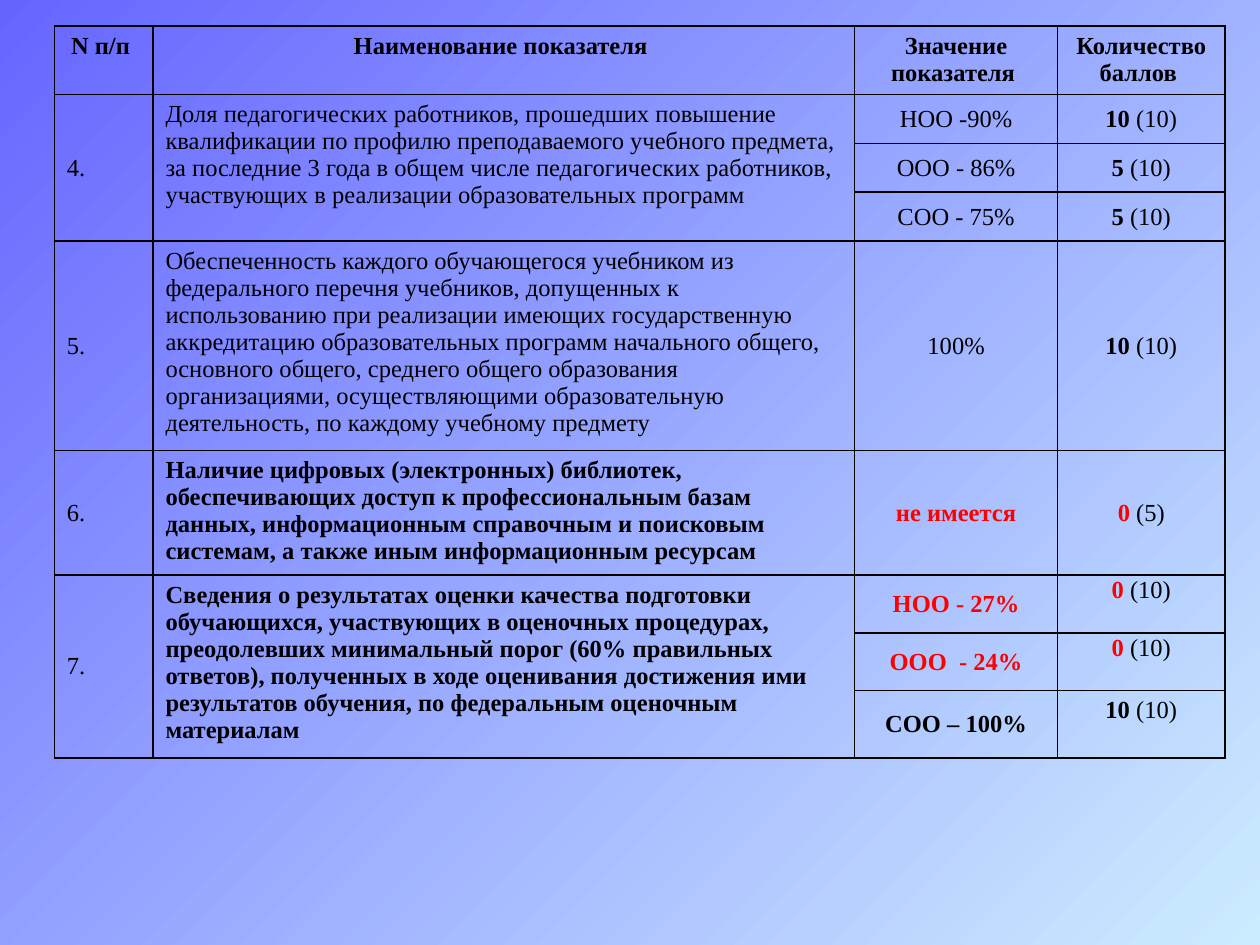
from dataclasses import dataclass

from lxml import etree
from pptx import Presentation
from pptx.dml.color import RGBColor
from pptx.enum.text import MSO_ANCHOR, PP_ALIGN
from pptx.oxml.ns import qn
from pptx.util import Pt

TOP, MIDDLE = MSO_ANCHOR.TOP, MSO_ANCHOR.MIDDLE
LEFT, CENTER = PP_ALIGN.LEFT, PP_ALIGN.CENTER


@dataclass(frozen=True)
class Theme:
    font: str = "Times New Roman"
    size: int = 14
    line: int = 1
    ink: str = "000000"
    alert: str = "FF0000"
    start: str = "6666FF"
    end: str = "CCECFF"


THEME = Theme()
WIDE = (7.2, 3.6)   # side and top insets of headings, numbers and names
TIGHT = (5.0, 0)    # the same for values and scores
LIFT = 15.5         # bottom inset that raises a score by half a line

COLS = (56.4, 401, 116, 95.6)
ROWS = (38.9, 28, 28, 28, 119.5, 71.4, 33, 33, 38.4)
TALL = 431.3

HEADS = ("N п/п ", "Наименование показателя ",
         "Значение показателя ", "Количество баллов ")

# number, name, strong, [(value, score, limit)]
GROUPS = (
    ("4.", "Доля педагогических работников, прошедших повышение квалификации "
     "по профилю преподаваемого учебного предмета, за последние 3 года в общем "
     "числе педагогических работников, участвующих в реализации "
     "образовательных программ", False,
     [("НОО -90%", "10", " (10)"), ("ООО - 86%", "5", " (10)"),
      ("СОО - 75%", "5", " (10)")]),
    ("5.", "Обеспеченность каждого обучающегося учебником из федерального "
     "перечня учебников, допущенных к использованию при реализации имеющих "
     "государственную аккредитацию образовательных программ начального общего, "
     "основного общего, среднего общего образования организациями, "
     "осуществляющими образовательную деятельность, по каждому учебному "
     "предмету", False,
     [("100%", "10", " (10)")]),
    ("6.", "Наличие цифровых (электронных) библиотек, обеспечивающих доступ к "
     "профессиональным базам данных, информационным справочным и поисковым "
     "системам, а также иным информационным ресурсам", True,
     [("не имеется", "0 ", "(5)")]),
    ("7.", "Сведения о результатах оценки качества подготовки обучающихся, "
     "участвующих в оценочных процедурах, преодолевших минимальный порог (60% "
     "правильных ответов), полученных в ходе оценивания достижения ими "
     "результатов обучения, по федеральным оценочным материалам", True,
     [("НОО - 27%", "0 ", "(10)"), ("ООО  - 24%", "0 ", "(10)"),
      ("СОО – 100%", "10 ", "(10)")]),
)


def style(run, bold, color):
    font = run.font
    font.name, font.size, font.bold = THEME.font, Pt(THEME.size), bold
    font.color.rgb = RGBColor.from_string(color)


def write(cell, text, bold=False, color=THEME.ink, align=LEFT,
          anchor=TOP, inset=WIDE, tail="", lift=0):
    """Fill a cell; tail is a plain second run after the text."""
    side, edge = inset
    cell.margin_left = cell.margin_right = Pt(side)
    cell.margin_top, cell.margin_bottom = Pt(edge), Pt(edge + lift)
    cell.vertical_anchor = anchor
    para = cell.text_frame.paragraphs[0]
    para.text = text
    para.alignment = align
    style(para.runs[0], bold, color)
    if tail:
        run = para.add_run()
        run.text = tail
        style(run, False, THEME.ink)


def frame(cell):
    """Clear the fill and draw all four borders."""
    cell.fill.background()
    props = cell._tc.get_or_add_tcPr()
    for spot, tag in enumerate(("a:lnL", "a:lnR", "a:lnT", "a:lnB")):
        line = etree.Element(qn(tag), w=str(Pt(THEME.line)))
        fill = etree.SubElement(line, qn("a:solidFill"))
        etree.SubElement(fill, qn("a:srgbClr"), val=THEME.ink)
        props.insert(spot, line)


def paint(slide):
    fill = slide.background.fill
    fill.gradient()
    fill.gradient_angle = 315
    for stop, color in zip(fill.gradient_stops, (THEME.start, THEME.end)):
        stop.color.rgb = RGBColor.from_string(color)


def add_grid(slide):
    shape = slide.shapes.add_table(len(ROWS), len(COLS), Pt(31), Pt(15),
                                   Pt(sum(COLS)), Pt(TALL))
    table = shape.table
    table.first_row = table.horz_banding = False
    for col, width in zip(table.columns, COLS):
        col.width = Pt(width)
    for row, height in zip(table.rows, ROWS):
        row.height = Pt(height)
    shape.height = Pt(TALL)
    for cell in table.iter_cells():
        frame(cell)
    return table


def add_group(table, top, group):
    """Write one indicator and return the row after it."""
    number, name, strong, marks = group
    last = top + len(marks) - 1
    if last > top:
        for col in (0, 1):
            table.cell(top, col).merge(table.cell(last, col))
    write(table.cell(top, 0), number, anchor=MIDDLE)
    write(table.cell(top, 1), name, bold=strong)
    lift = LIFT if strong and last > top else 0
    for row, (value, score, limit) in enumerate(marks, top):
        color = THEME.alert if score.strip() == "0" else THEME.ink
        look = dict(color=color, align=CENTER, anchor=MIDDLE, inset=TIGHT)
        write(table.cell(row, 2), value, bold=strong, **look)
        write(table.cell(row, 3), score, bold=True, tail=limit, lift=lift,
              **look)
    return last + 1


def main():
    deck = Presentation()
    deck.slide_width, deck.slide_height = Pt(720), Pt(540)
    slide = deck.slides.add_slide(deck.slide_layouts[6])
    paint(slide)
    table = add_grid(slide)
    for col, head in enumerate(HEADS):
        write(table.cell(0, col), head, bold=True, align=CENTER)
    top = 1
    for group in GROUPS:
        top = add_group(table, top, group)
    deck.save("out.pptx")


if __name__ == "__main__":
    main()
